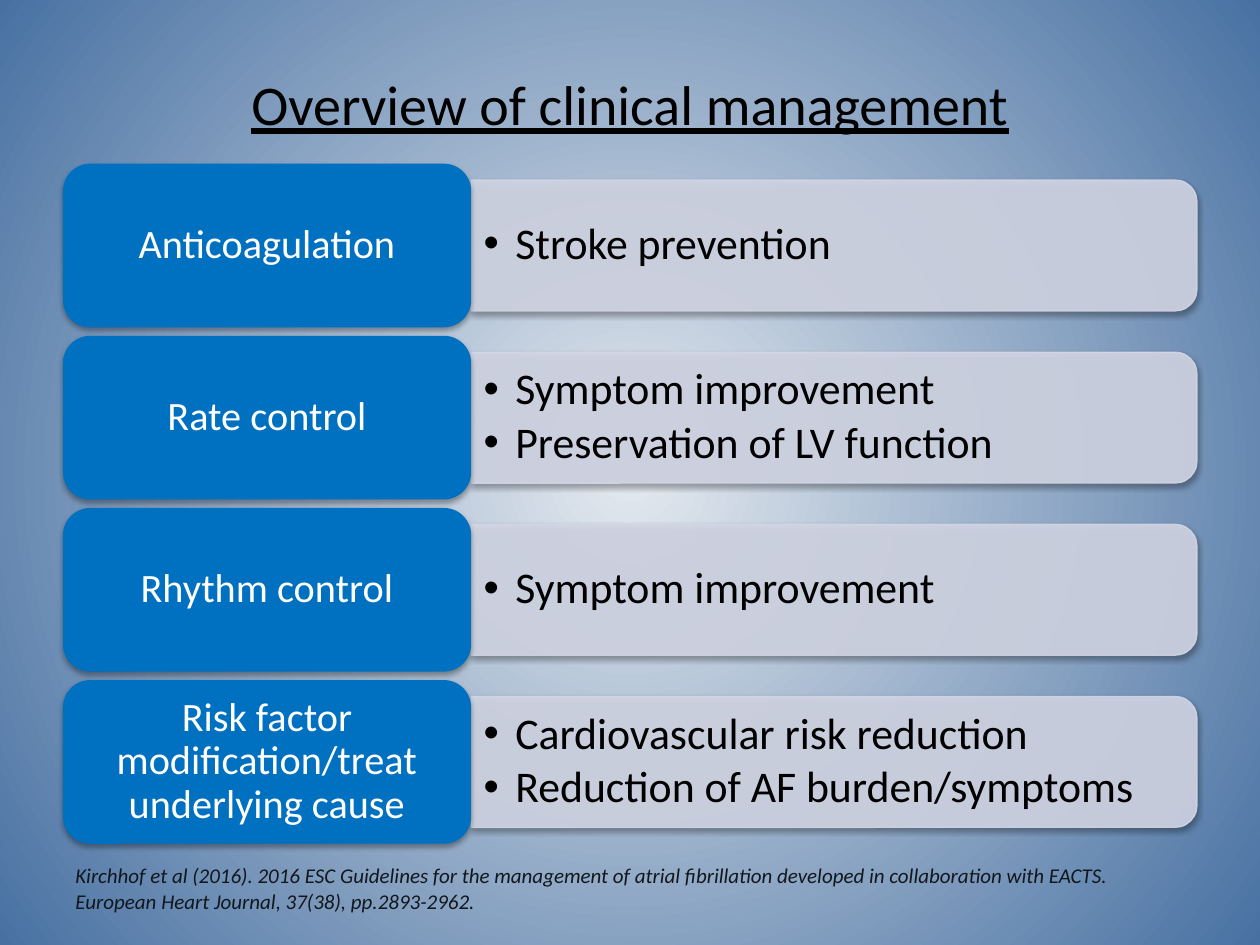
from pptx import Presentation
from pptx import util as u
from pptx.dml import color
from pptx.enum import shapes, text
from pptx.oxml import ns, parse_xml

ROWS = [
    ("Anticoagulation", ["Stroke prevention"]),
    ("Rate control", ["Symptom improvement", "Preservation of LV function"]),
    ("Rhythm control", ["Symptom improvement"]),
    ("Risk factor modification/treat underlying cause",
     ["Cardiovascular risk reduction", "Reduction of AF burden/symptoms"]),
]
CITATION = ("Kirchhof et al (2016). 2016 ESC Guidelines for the management of atrial "
            "fibrillation developed in collaboration with EACTS. European Heart Journal, "
            "37(38), pp.2893-2962.")
LEFT, TOP, ROW_STEP = 1.27, 3.3, 3.47
LABEL_WIDTH, LABEL_HEIGHT = 8.23, 3.3
PANEL_WIDTH, PANEL_HEIGHT = 14.63, 2.64


def rgb(value):
    return color.RGBColor.from_string(value)


def element(tag, attributes="", content=""):
    return parse_xml(f'<a:{tag} {ns.nsdecls("a")} {attributes}>{content}</a:{tag}>')


def apply(target, values):
    for name, value in values.items():
        setattr(target, name, value)


class Painter:
    font = "Calibri"
    label_fill, panel_fill = "0070C0", "D2D6E5"

    def __init__(self, page):
        self.page = page

    def background(self, center, edge):
        fill = self.page.background.fill
        fill.gradient()
        for stop, position, value in zip(fill.gradient_stops, (0, 1), (center, edge)):
            stop.position = position
            stop.color.rgb = rgb(value)
        linear = self.page._element.find(".//" + ns.qn("a:lin"))
        focus = '<a:fillToRect l="50000" t="50000" r="50000" b="50000"/>'
        linear.getparent().replace(linear, element("path", 'path="circle"', focus))

    def set_text(self, box, lines, size, ink, frame=None, para_format=None, font=None):
        apply(box.text_frame, {"word_wrap": True,
                               "vertical_anchor": text.MSO_ANCHOR.MIDDLE, **(frame or {})})
        box.text_frame.text = "\n".join(lines)
        for para in box.text_frame.paragraphs:
            apply(para, para_format or {})
            for span in para.runs:
                apply(span.font, {"name": self.font, "size": u.Pt(size), **(font or {})})
                span.font.color.rgb = rgb(ink)

    def title(self, words):
        box = self.page.shapes.title
        apply(box, {"left": u.Cm(LEFT), "top": u.Cm(1.27),
                    "width": u.Cm(22.86), "height": u.Cm(3.18)})
        self.set_text(box, [words], 32, "000000",
                      frame={"vertical_anchor": text.MSO_ANCHOR.TOP},
                      para_format={"alignment": text.PP_ALIGN.CENTER},
                      font={"underline": True})

    def text_box(self, left, top, width, height):
        return self.page.shapes.add_textbox(*map(u.Cm, (left, top, width, height)))

    def shape(self, kind, left, top, width, height, fill):
        box = self.page.shapes.add_shape(kind, *map(u.Cm, (left, top, width, height)))
        box.shadow.inherit = False
        box.fill.solid()
        box.fill.fore_color.rgb = rgb(fill)
        box.line.fill.background()
        shade = '<a:srgbClr val="000000"><a:alpha val="35000"/></a:srgbClr>'
        box._element.spPr.find(ns.qn("a:effectLst")).append(element(
            "outerShdw", 'blurRad="39370" dist="22860" dir="5400000" rotWithShape="0"', shade))
        return box

    def panel(self, left, top):
        shift = (PANEL_WIDTH - PANEL_HEIGHT) / 2
        box = self.shape(shapes.MSO_SHAPE.ROUND_2_SAME_RECTANGLE, left + shift, top - shift,
                         PANEL_HEIGHT, PANEL_WIDTH, self.panel_fill)
        box.rotation = 90
        box.line.color.rgb = rgb(self.panel_fill)
        box.line.width = u.Pt(0.75)
        for tint in box._element.spPr.iterfind(".//" + ns.qn("a:solidFill") + "/*"):
            tint.append(element("alpha", 'val="90000"'))

    def bullets(self, left, top, lines):
        box = self.text_box(left, top + 0.13, PANEL_WIDTH - 0.13, PANEL_HEIGHT - 0.26)
        self.set_text(box, lines, 25, "000000",
                      para_format={"line_spacing": 0.9, "space_after": u.Pt(3.75)})
        for para in box.text_frame.paragraphs:
            properties = para._p.get_or_add_pPr()
            properties.set("marL", str(u.Cm(0.64)))
            properties.set("indent", str(-u.Cm(0.64)))
            properties.append(element("buFont", 'typeface="Arial"'))
            properties.append(element("buChar", 'char="•"'))

    def label(self, left, top, words):
        box = self.shape(shapes.MSO_SHAPE.ROUNDED_RECTANGLE, left, top,
                         LABEL_WIDTH, LABEL_HEIGHT, self.label_fill)
        self.set_text(box, [words], 23, "FFFFFF",
                      frame={"margin_left": u.Cm(0.41), "margin_right": u.Cm(0.41)},
                      para_format={"alignment": text.PP_ALIGN.CENTER, "line_spacing": 0.9})

    def citation(self, words):
        self.set_text(self.text_box(LEFT, 17.65, 22.86, 1.02), [words], 12, "11171D",
                      frame={"margin_bottom": u.Cm(0.64)}, font={"italic": True})


def main():
    deck = Presentation()
    deck.slide_width, deck.slide_height = u.Cm(25.4), u.Cm(19.05)
    painter = Painter(deck.slides.add_slide(deck.slide_layouts[5]))
    painter.background("E4E9EF", "4871A2")
    painter.title("Overview of clinical management")
    panel_left = LEFT + LABEL_WIDTH
    for index, (name, aims) in enumerate(ROWS):
        top = TOP + index * ROW_STEP
        panel_top = top + (LABEL_HEIGHT - PANEL_HEIGHT) / 2
        painter.panel(panel_left, panel_top)
        painter.bullets(panel_left, panel_top, aims)
        painter.label(LEFT, top, name)
    painter.citation(CITATION)
    deck.save("out.pptx")


if __name__ == "__main__":
    main()
